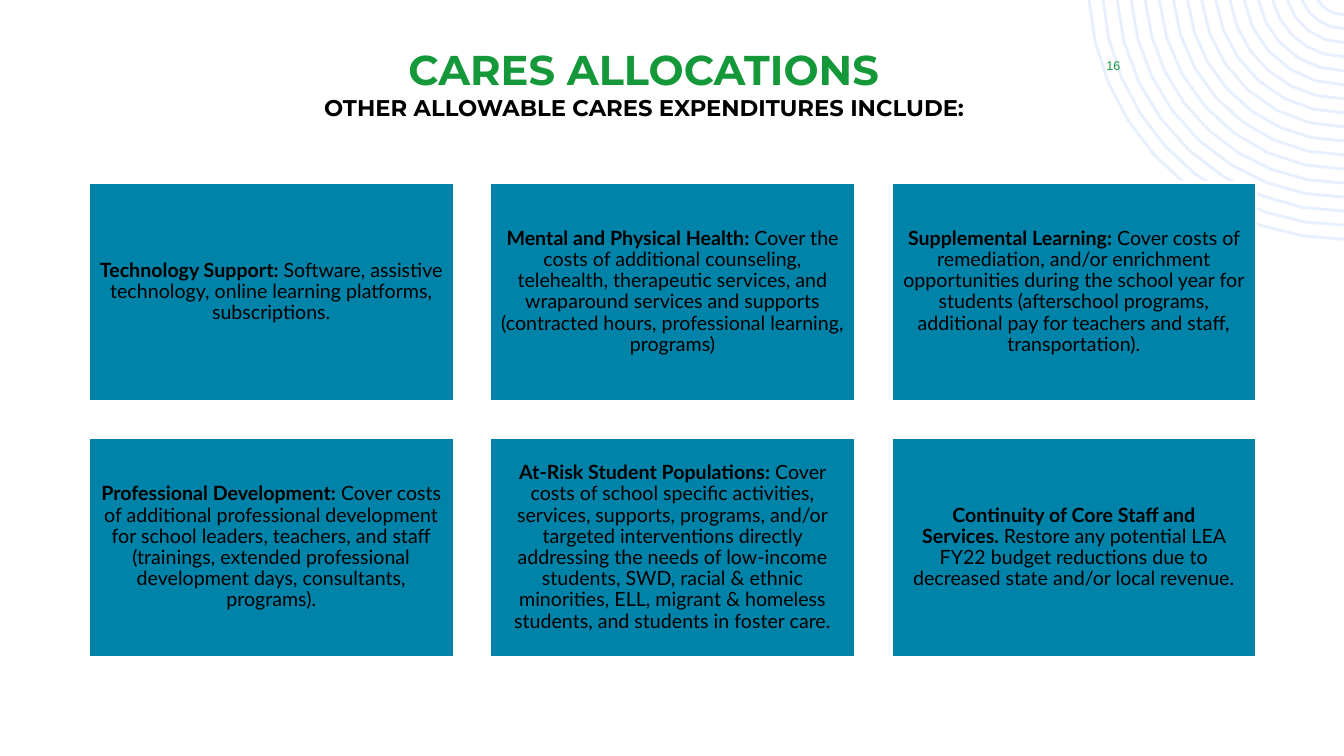
import math
from dataclasses import dataclass

import pptx
import pptx.dml.color
import pptx.enum.shapes
import pptx.enum.text
import pptx.util

Cm = pptx.util.Cm
Pt = pptx.util.Pt
ANCHOR = pptx.enum.text.MSO_ANCHOR
NBSP = chr(160)


@dataclass(frozen=True)
class Theme:
    green: str = "159839"
    black: str = "000000"
    white: str = "FFFFFF"
    card: str = "0083A9"
    ring: str = "E6F0FE"
    heading_font: str = "Montserrat"
    body_font: str = "Lato"
    number_font: str = "Arial"
    title_size: float = 29.7
    subtitle_size: float = 16.2
    card_size: float = 14
    number_size: float = 9


THEME = Theme()

EXPENDITURES = [
    ("Technology Support:",
     "Software, assistive technology, online learning platforms, subscriptions."),
    ("Mental and Physical Health:",
     "Cover the costs of additional counseling, telehealth, therapeutic services, "
     "and wraparound services and supports (contracted hours, professional learning, programs)"),
    ("Supplemental Learning:",
     "Cover costs of remediation, and/or enrichment opportunities during the school year "
     "for students (afterschool programs, additional pay for teachers and staff, transportation)."),
    ("Professional Development:",
     "Cover costs of additional professional development for school leaders, teachers, "
     "and staff (trainings, extended professional development days, consultants, programs)."),
    ("At-Risk Student Populations:",
     "Cover costs of school specific activities, services, supports, programs, and/or targeted "
     "interventions directly addressing the needs of low-income students, SWD, racial & ethnic "
     f"minorities,{NBSP}ELL, migrant & homeless students, and students in foster care."),
    ("Continuity of Core Staff and Services.",
     "Restore any potential LEA FY22 budget reductions due to decreased state and/or local revenue."),
]


def rgb(colour):
    return pptx.dml.color.RGBColor.from_string(colour)


def add_text(para, text, *, font, size, colour, bold=False):
    para.alignment = pptx.enum.text.PP_ALIGN.CENTER
    span = para.add_run()
    span.text = text
    span.font.name = font
    span.font.size = Pt(size)
    span.font.bold = bold
    span.font.color.rgb = rgb(colour)


def add_frame(page, left, top, width, height, anchor):
    """Add a wrapping text box and return its text frame."""
    box = page.shapes.add_textbox(Cm(left), Cm(top), Cm(width), Cm(height))
    box.text_frame.word_wrap = True
    box.text_frame.vertical_anchor = anchor
    return box.text_frame


def add_rings(page, centre_x, centre_y, inner, outer, count=17):
    """Draw concentric arcs from the top edge of the page to its right edge."""
    def arc(radius, steps):
        start = math.asin(-centre_y / radius)
        angles = [start + (math.pi / 2 - start) * i / steps for i in range(steps + 1)]
        return [(Cm(centre_x - radius * math.cos(a)), Cm(centre_y + radius * math.sin(a)))
                for a in angles]

    builder = None
    for i in range(count):
        radius = inner + (outer - inner) * i / (count - 1)
        points = arc(radius, steps=4 + i // 3)
        if builder is None:
            builder = page.shapes.build_freeform(*points[0])
        else:
            builder.move_to(*points[0])
        builder.add_line_segments(points[1:], close=False)
    rings = builder.convert_to_shape()
    rings.shadow.inherit = False
    rings.fill.background()
    rings.line.color.rgb = rgb(THEME.ring)
    rings.line.width = Pt(2)


def add_heading(page, left, top, width, height):
    frame = add_frame(page, left, top, width, height, ANCHOR.TOP)
    add_text(frame.paragraphs[0], "CARES ALLOCATIONS", font=THEME.heading_font,
             size=THEME.title_size, colour=THEME.green, bold=True)
    add_text(frame.add_paragraph(), "OTHER ALLOWABLE CARES EXPENDITURES INCLUDE:",
             font=THEME.heading_font, size=THEME.subtitle_size, colour=THEME.black, bold=True)


def add_page_number(page, left, top, width, height):
    frame = add_frame(page, left, top, width, height, ANCHOR.MIDDLE)
    add_text(frame.paragraphs[0], "16", font=THEME.number_font,
             size=THEME.number_size, colour=THEME.green)


def add_card(page, left, top, width, height, label, body):
    card = page.shapes.add_shape(pptx.enum.shapes.MSO_SHAPE.RECTANGLE,
                                 Cm(left), Cm(top), Cm(width), Cm(height))
    card.shadow.inherit = False
    card.fill.solid()
    card.fill.fore_color.rgb = rgb(THEME.card)
    card.line.color.rgb = rgb(THEME.white)
    card.line.width = Pt(1.5)
    frame = card.text_frame
    frame.word_wrap = True
    frame.vertical_anchor = ANCHOR.MIDDLE
    frame.margin_left = frame.margin_right = Cm(0.15)
    frame.margin_top = frame.margin_bottom = Cm(0.15)
    para = frame.paragraphs[0]
    para.line_spacing = 0.9
    style = dict(font=THEME.body_font, size=THEME.card_size, colour=THEME.black)
    add_text(para, label + NBSP, bold=True, **style)
    add_text(para, body, **style)


def add_card_grid(page, left, top, width, height, columns=3, gap=0.92):
    rows = math.ceil(len(EXPENDITURES) / columns)
    card_width = (width - gap * (columns - 1)) / columns
    card_height = (height - gap * (rows - 1)) / rows
    for i, (label, body) in enumerate(EXPENDITURES):
        row, column = divmod(i, columns)
        add_card(page, left + column * (card_width + gap), top + row * (card_height + gap),
                 card_width, card_height, label, body)


def main():
    deck = pptx.Presentation()
    deck.slide_width = Cm(33.87)
    deck.slide_height = Cm(19.05)
    page = deck.slides.add_slide(deck.slide_layouts[6])
    add_rings(page, centre_x=33.87, centre_y=-0.41, inner=0.78, outer=6.44)
    add_heading(page, 5.11, 0.97, 22.23, 2.13)
    add_page_number(page, 27.03, 1.27, 2.06, 0.76)
    add_card_grid(page, 2.24, 4.6, 29.42, 11.96)
    deck.save("out.pptx")


if __name__ == "__main__":
    main()
